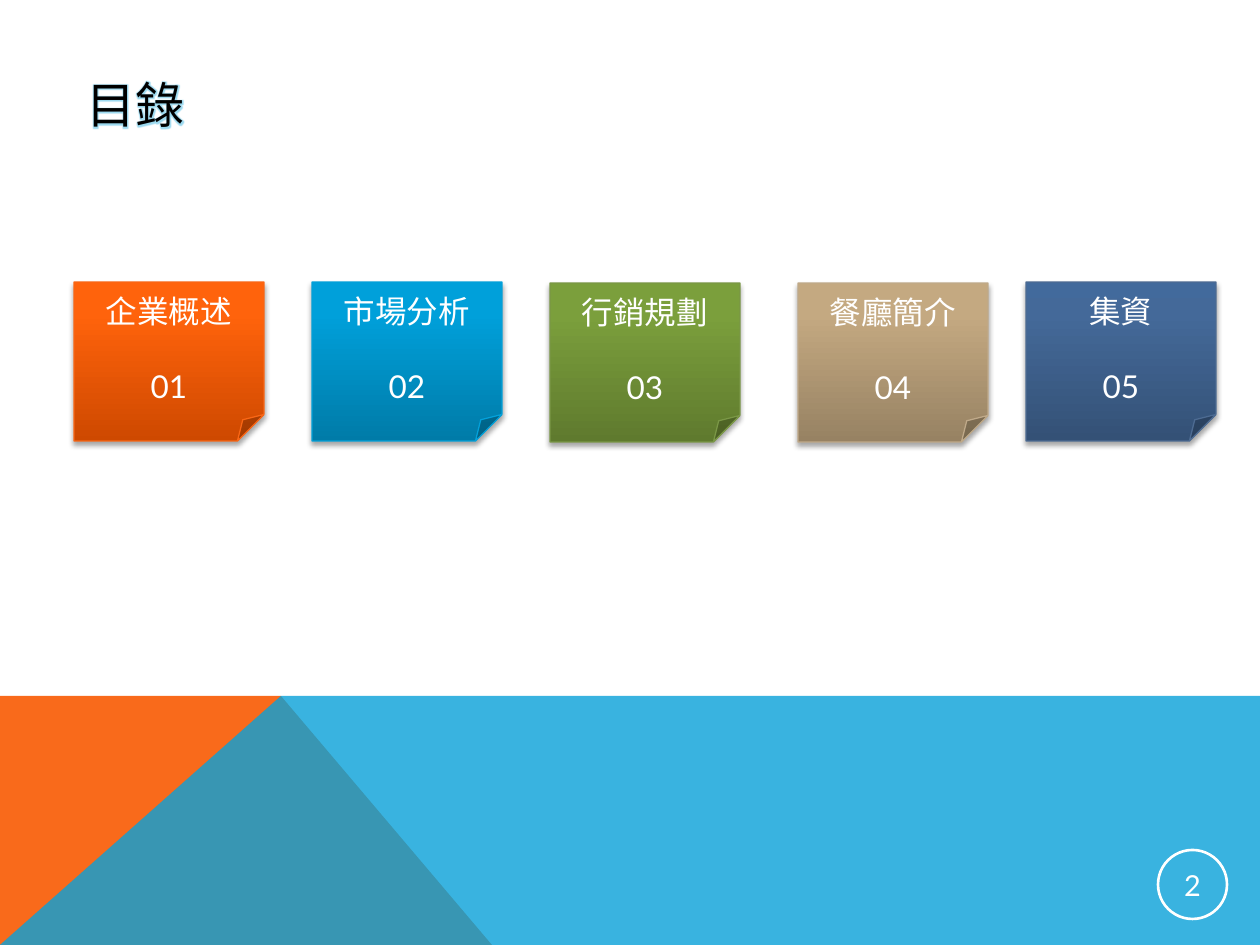
"""Builds a contents slide with five folded cards above a coloured band."""
from lxml import etree
from pptx import Presentation
from pptx import util as u
from pptx.dml.color import RGBColor
from pptx.enum import shapes, text
from pptx.oxml import parse_xml
from pptx.oxml.ns import qn

TITLE = "目錄"
PAGE = "2"
CARDS = [
    ("企業概述", 74, 282, "orange"),
    ("市場分析", 312, 282, "blue"),
    ("行銷規劃", 550, 283, "green"),
    ("餐廳簡介", 798, 283, "tan"),
    ("集資", 1026, 282, "navy"),
]
BAND = [
    ("left", 100, [(0, 945), (0, 696), (281, 696), (492, 945)]),
    ("right", 80, [(0, 945), (281, 696), (1260, 696), (1260, 945)]),
]
THEME = {
    "font": "Lato",
    "size": {"title": 28, "card": 18, "page": 16.5},
    "ink": "000000",
    "white": "FFFFFF",
    "left": "F96A1B",
    "right": "08A1D9",
    "cards": {
        "orange": ("CE4900", "FF630C", "FF640E", "F96615"),
        "blue": ("007BA8", "00A0DA", "00A0DB", "03A0D9"),
        "green": ("5F7A2E", "7B9F3C", "7CA13B", "7A9746"),
        "tan": ("978263", "C4A981", "C6AA80", "BFA989"),
        "navy": ("345176", "446999", "426A9C", "4D6B92"),
    },
}
SCALE = 914400 / 126
CARD_W, CARD_H = 190, 159
STOPS = (0, 80, 100)
NS = 'xmlns:a="http://schemas.openxmlformats.org/drawingml/2006/main"'


def px(*vals):
    return [u.Emu(round(v * SCALE)) for v in vals]


def rgb(code):
    return RGBColor.from_string(code)


def tint(node, code, alpha):
    clr = etree.SubElement(node, qn("a:srgbClr"), val=code)
    etree.SubElement(clr, qn("a:alpha"), val=str(alpha * 1000))


def write(para, words, size, ink, align=text.PP_ALIGN.CENTER):
    para.alignment = align
    run = para.add_run()
    run.text = words
    run.font.size = u.Pt(THEME["size"][size])
    run.font.color.rgb = rgb(THEME[ink])
    run.font.name = THEME["font"]
    return run


def add_band(slide):
    for name, alpha, (start, *rest) in BAND:
        form = slide.shapes.build_freeform(*start, scale=SCALE)
        form.add_line_segments(rest, close=True)
        area = form.convert_to_shape()
        area.shadow.inherit = False
        area.line.fill.background()
        area.fill.solid()
        area.fill.fore_color.rgb = rgb(THEME[name])
        if alpha < 100:
            clr = area.fill._xPr.find(".//" + qn("a:srgbClr"))
            etree.SubElement(clr, qn("a:alpha"), val=str(alpha * 1000))


def add_title(slide):
    box = slide.shapes.add_textbox(*px(74, 66, 1036, 76))
    frame = box.text_frame
    frame.word_wrap = True
    frame.vertical_anchor = text.MSO_ANCHOR.MIDDLE
    run = write(frame.paragraphs[0], TITLE, "title", "ink", text.PP_ALIGN.LEFT)
    glow = parse_xml(f'<a:effectLst {NS}><a:glow rad="38100"/></a:effectLst>')
    tint(glow[0], THEME["right"], 40)
    run.font.fill._xPr.find(qn("a:solidFill")).addnext(glow)


def add_page(slide):
    ring = slide.shapes.add_shape(shapes.MSO_SHAPE.OVAL, *px(1158, 850, 69, 69))
    ring.shadow.inherit = False
    ring.fill.background()
    ring.line.color.rgb = rgb(THEME["white"])
    ring.line.width = u.Pt(1.5)
    frame = ring.text_frame
    frame.vertical_anchor = text.MSO_ANCHOR.MIDDLE
    frame.margin_left = frame.margin_right = u.Inches(0.01)
    frame.margin_top = frame.margin_bottom = u.Inches(0.01)
    write(frame.paragraphs[0], PAGE, "page", "white")


def add_card(slide, num, label, left, top, hue):
    *shades, edge = THEME["cards"][hue]
    card = slide.shapes.add_shape(
        shapes.MSO_SHAPE.FOLDED_CORNER, *px(left, top, CARD_W, CARD_H))
    card.fill.gradient()
    card.fill.gradient_angle = 90
    props = card.fill._xPr
    stops = props.find(".//" + qn("a:gsLst"))
    stops.clear()
    for pos, shade in zip(STOPS, shades):
        stop = etree.SubElement(stops, qn("a:gs"), pos=str(pos * 1000))
        etree.SubElement(stop, qn("a:srgbClr"), val=shade)
    card.line.color.rgb = rgb(edge)
    card.line.width = u.Pt(0.75)
    card.shadow.inherit = False
    shade = etree.SubElement(
        props.find(qn("a:effectLst")), qn("a:outerShdw"),
        blurRad=str(u.Pt(3.1)), dist=str(u.Pt(1.8)), dir="5400000", rotWithShape="0")
    tint(shade, THEME["ink"], 35)
    frame = card.text_frame
    frame.word_wrap = True
    frame.vertical_anchor = text.MSO_ANCHOR.MIDDLE
    write(frame.paragraphs[0], label, "card", "white")
    para = frame.add_paragraph()
    para.space_before = u.Pt(21.6)
    write(para, f"{num:02}", "card", "white")


def main():
    deck = Presentation()
    deck.slide_width, deck.slide_height = px(1260, 945)
    slide = deck.slides.add_slide(deck.slide_layouts[6])
    add_band(slide)
    add_title(slide)
    add_page(slide)
    for num, card in enumerate(CARDS, 1):
        add_card(slide, num, *card)
    deck.save("out.pptx")


if __name__ == "__main__":
    main()
